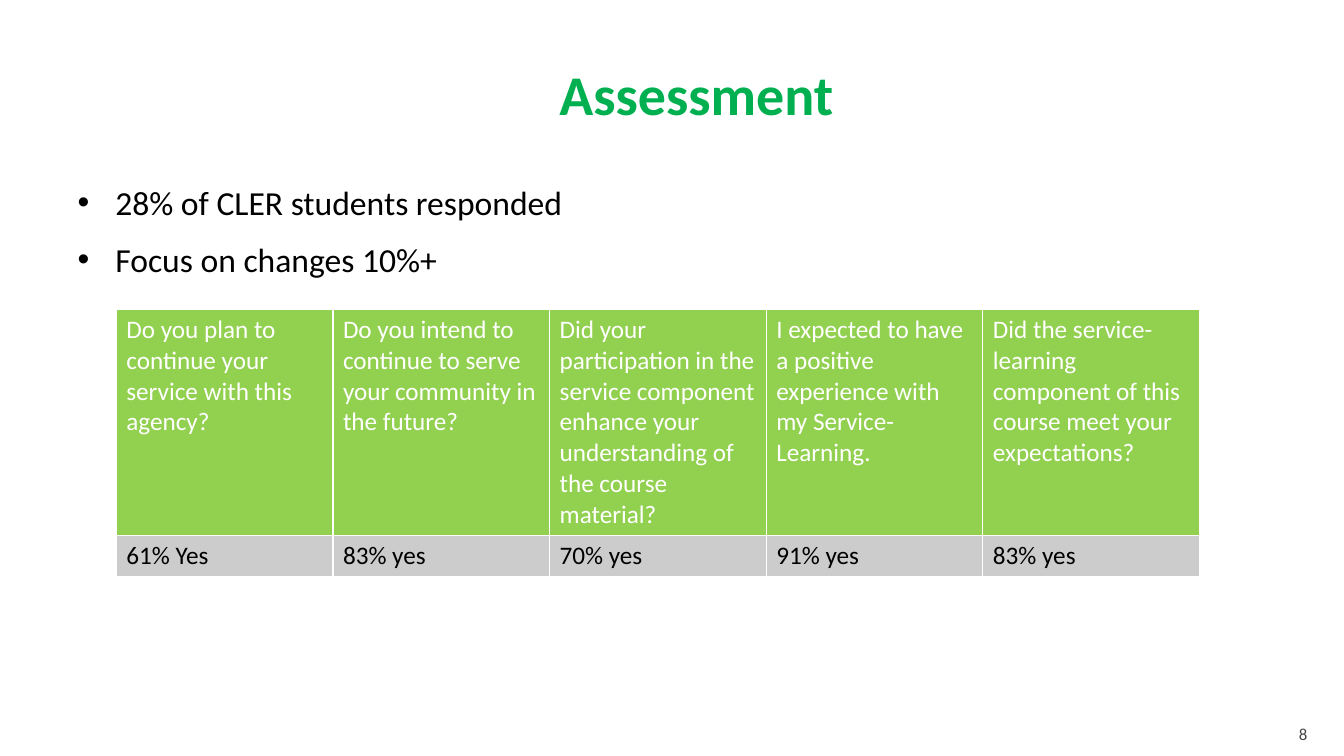
from dataclasses import dataclass

from lxml import etree
from pptx import Presentation
from pptx import util as u
from pptx.dml.color import RGBColor
from pptx.enum import text
from pptx.oxml import ns

FONT = "Calibri"
BLACK = RGBColor(0, 0, 0)
WHITE = RGBColor(0xFF, 0xFF, 0xFF)
TITLE_GREEN = RGBColor(0x00, 0xB0, 0x50)
HEADER_GREEN = RGBColor(0x92, 0xD0, 0x50)
ANSWER_GREY = RGBColor(0xCC, 0xCC, 0xCC)
NUMBER_GREY = RGBColor(0x45, 0x45, 0x45)


@dataclass(frozen=True)
class Result:
    question: str
    answer: str


@dataclass(frozen=True)
class RowStyle:
    height: float
    fill: RGBColor
    color: RGBColor


BULLETS = ["28% of CLER students responded", "Focus on changes 10%+"]
RESULTS = [
    Result("Do you plan to continue your service with this agency?", "61% Yes"),
    Result("Do you intend to continue to serve your community in the future?", "83% yes"),
    Result("Did your participation in the service component enhance your "
           "understanding of the course material?", "70% yes"),
    Result("I expected to have a positive experience with my Service-Learning.", "91% yes"),
    Result("Did the service-learning component of this course meet your expectations?",
           "83% yes"),
]
HEADER = RowStyle(5.7, HEADER_GREEN, WHITE)
ANSWERS = RowStyle(1.04, ANSWER_GREY, BLACK)
COLUMN_WIDTH = 5.46


def place(sp, left: float, top: float, width: float, height: float) -> None:
    """Position a shape, in centimetres."""
    sp.left, sp.top, sp.width, sp.height = map(u.Cm, (left, top, width, height))


def write(tf, *lines: str, size: float, color: RGBColor, bold: bool = False,
          align=text.PP_ALIGN.LEFT, anchor=text.MSO_ANCHOR.TOP, gap: float = 0) -> None:
    """Fill a text frame with one paragraph per line, gap points apart."""
    tf.word_wrap = True
    tf.vertical_anchor = anchor
    for i, line in enumerate(lines):
        p = tf.add_paragraph() if i else tf.paragraphs[0]
        p.alignment = align
        p.space_before = u.Pt(gap if i else 0)
        r = p.add_run()
        r.text = line
        r.font.name, r.font.size, r.font.bold = FONT, u.Pt(size), bold
        r.font.color.rgb = color


def add_borders(cell, color: RGBColor, width: float) -> None:
    props = cell._tc.get_or_add_tcPr()
    for side in ("a:lnL", "a:lnR", "a:lnT", "a:lnB"):
        ln = etree.SubElement(props, ns.qn(side), w=str(u.Pt(width)))
        fill = etree.SubElement(ln, ns.qn("a:solidFill"))
        etree.SubElement(fill, ns.qn("a:srgbClr"), val=str(color))


def add_results(s, left: float, top: float) -> None:
    styles = (HEADER, ANSWERS)
    size = (COLUMN_WIDTH * len(RESULTS), sum(style.height for style in styles))
    table = s.shapes.add_table(len(styles), len(RESULTS),
                               *map(u.Cm, (left, top, *size))).table
    for row, style in zip(table.rows, styles):
        row.height = u.Cm(style.height)
    for col, result in enumerate(RESULTS):
        table.columns[col].width = u.Cm(COLUMN_WIDTH)
        for row, (wording, style) in enumerate(zip((result.question, result.answer), styles)):
            cell = table.cell(row, col)
            add_borders(cell, WHITE, 1)
            cell.fill.solid()
            cell.fill.fore_color.rgb = style.fill
            write(cell.text_frame, wording, size=18, color=style.color)


def main() -> None:
    prs = Presentation()
    prs.slide_width, prs.slide_height = u.Cm(33.87), u.Cm(19.05)
    s = prs.slides.add_slide(prs.slide_layouts[1])

    title, body = s.shapes.title, s.placeholders[1]
    place(title, 4.29, 0.76, 26.52, 3.18)
    write(title.text_frame, "Assessment", size=40, color=TITLE_GREEN, bold=True,
          align=text.PP_ALIGN.CENTER, anchor=text.MSO_ANCHOR.MIDDLE)

    place(body, 1.7, 4.45, 30.48, 12.85)
    write(body.text_frame, *BULLETS, size=24, color=BLACK, gap=12)
    for sp in (title, body):
        sp.text_frame.auto_size = text.MSO_AUTO_SIZE.NONE

    add_results(s, 2.93, 7.8)

    number = s.shapes.add_textbox(*map(u.Cm, (30.48, 17.98, 2.72, 0.76)))
    number.text_frame.margin_bottom = 0
    write(number.text_frame, "8", size=12, color=NUMBER_GREY,
          align=text.PP_ALIGN.RIGHT, anchor=text.MSO_ANCHOR.BOTTOM)

    prs.save("out.pptx")


if __name__ == "__main__":
    main()
